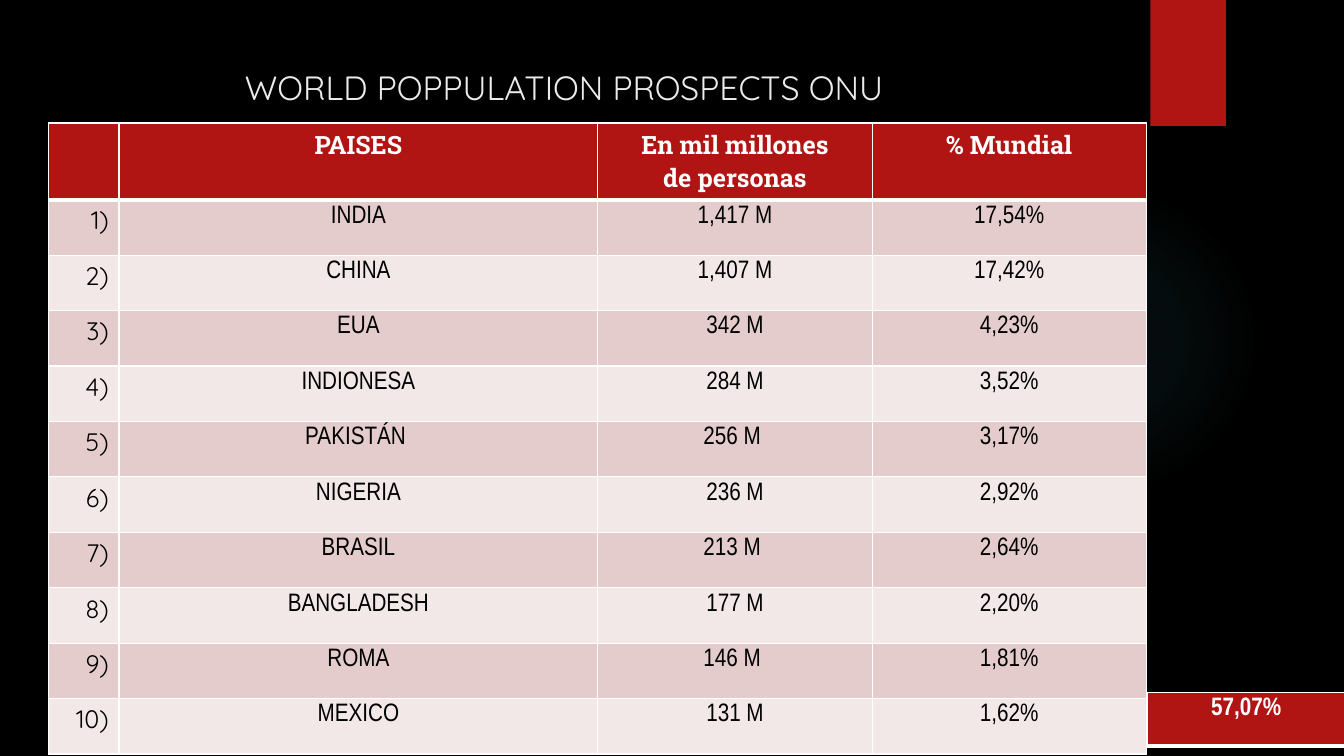
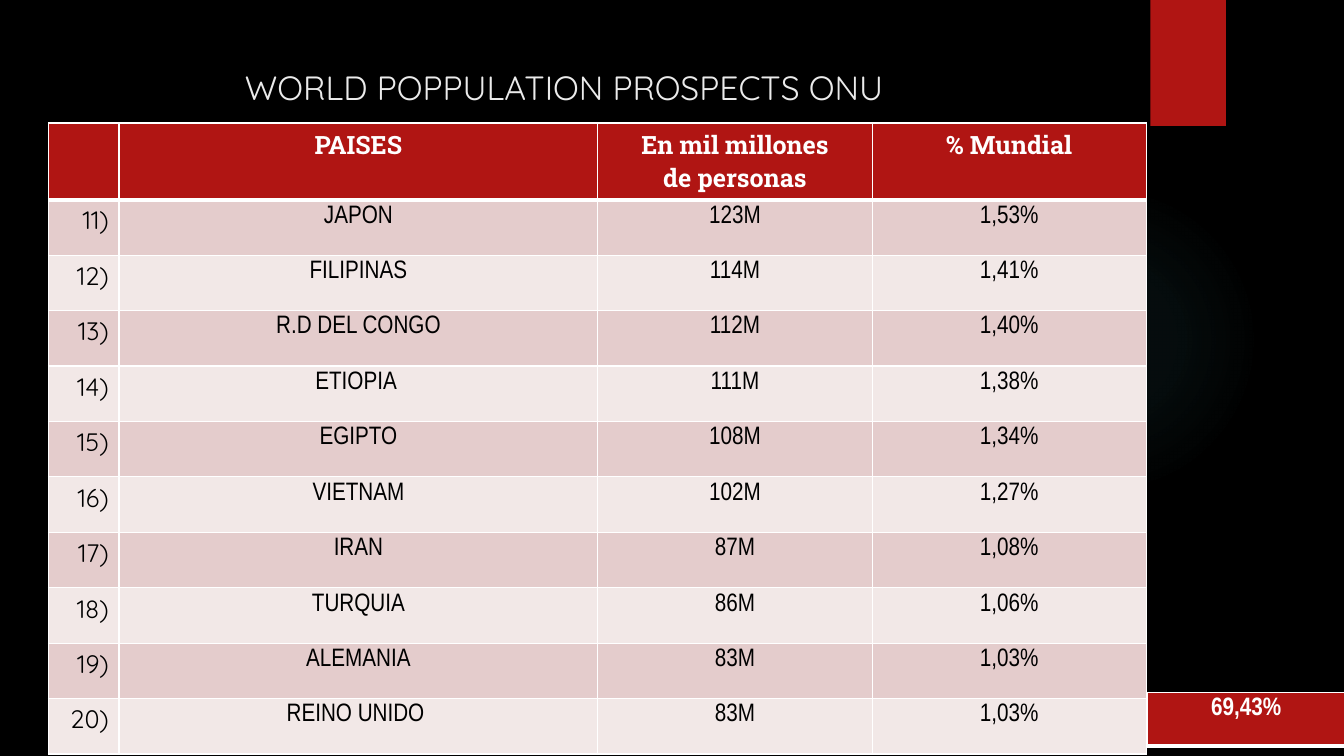
from lxml import etree
from pptx import Presentation
from pptx.dml.color import RGBColor
from pptx.enum import shapes, text
from pptx.oxml import parse_xml
from pptx.oxml.ns import nsdecls, qn
from pptx.util import Inches, Pt

COLORS = {"back": "000000", "red": "B01513", "title": "EBEBEB", "white": "FFFFFF",
          "black": "000000", "odd": "E4CCCC", "even": "F2E8E7", "glow": "50B9C1"}
SANS, SLAB, SLIM = "Quicksand", "Roboto Slab", "Arial Narrow"
LEFT, MID, RIGHT = text.PP_ALIGN.LEFT, text.PP_ALIGN.CENTER, text.PP_ALIGN.RIGHT

TITLE = "WORLD POPPULATION PROSPECTS ONU"
HEADS = ["", "PAISES", "En mil millones\nde personas", "% Mundial"]
COLS = [0.7, 4.75, 2.72, 2.72]
HEAD_H, ROW_H = 0.7, 0.55

FIRST = [
    ("INDIA", "1,417 M", "17,54%"),
    ("CHINA", "1,407 M", "17,42%"),
    ("EUA", "342 M", "4,23%"),
    ("INDIONESA", "284 M", "3,52%"),
    ("PAKISTÁN ", "256 M ", "3,17%"),
    ("NIGERIA", "236 M", "2,92%"),
    ("BRASIL", "213 M ", "2,64%"),
    ("BANGLADESH", "177 M", "2,20%"),
    ("ROMA", "146 M ", "1,81%"),
    ("MEXICO", "131 M", "1,62%"),
]
SECOND = [
    ("JAPON", "123M", "1,53%"),
    ("FILIPINAS", "114M", "1,41%"),
    ("R.D DEL CONGO", "112M", "1,40%"),
    ("ETIOPIA ", "111M", "1,38%"),
    ("EGIPTO", "108M", "1,34%"),
    ("VIETNAM", "102M", "1,27%"),
    ("IRAN", "87M", "1,08%"),
    ("TURQUIA", "86M", "1,06%"),
    ("ALEMANIA", "83M", "1,03%"),
    ("REINO UNIDO ", "83M", "1,03%"),
]


def rgb(name):
    return RGBColor.from_string(COLORS[name])


def write(frame, words, font=SLIM, size=18, color="black", bold=False, align=MID):
    frame.text = words
    for para in frame.paragraphs:
        para.alignment = align
        para.font.name = font
        para.font.size = Pt(size)
        para.font.bold = bold
        para.font.color.rgb = rgb(color)


def border(cell, **sides):
    """Draw white cell edges; each side (L, R, T, B) gives a width in points."""
    props = cell._tc.get_or_add_tcPr()
    for spot, (side, width) in enumerate(sides.items()):
        line = etree.Element(qn(f"a:ln{side}"), w=str(Pt(width)))
        fill = etree.SubElement(line, qn("a:solidFill"))
        etree.SubElement(fill, qn("a:srgbClr"), val=COLORS["white"])
        props.insert(spot, line)


def fill_cell(cell, words, fill, edges=None, **style):
    cell.fill.solid()
    cell.fill.fore_color.rgb = rgb(fill)
    cell.margin_top = Inches(0.05)
    border(cell, **(edges or {"L": 1, "R": 1, "B": 1}))
    write(cell.text_frame, words, **style)


def add_grid(slide, left, top, cols, rows):
    frame = slide.shapes.add_table(len(rows), len(cols), Inches(left), Inches(top),
                                   Inches(sum(cols)), Inches(sum(rows)))
    table = frame.table
    table.first_row = table.horz_banding = False
    for col, width in zip(table.columns, cols):
        col.width = Inches(width)
    for row, height in zip(table.rows, rows):
        row.height = Inches(height)
    return table


def add_plain(slide, kind, left, top, width, height):
    shape = slide.shapes.add_shape(kind, Inches(left), Inches(top),
                                   Inches(width), Inches(height))
    shape.shadow.inherit = False
    shape.line.fill.background()
    return shape


def add_glow(slide, left, top, size):
    glow = add_plain(slide, shapes.MSO_SHAPE.OVAL, left, top, size, size)
    glow.fill.background()
    stops = "".join(
        f'<a:gs pos="{pos * 1000}"><a:srgbClr val="{COLORS["glow"]}">'
        f'<a:alpha val="{alpha * 1000}"/></a:srgbClr></a:gs>'
        for pos, alpha in [(0, 7), (36, 6), (69, 0)])
    fill = parse_xml(
        f'<a:gradFill {nsdecls("a")}><a:gsLst>{stops}</a:gsLst><a:path path="circle">'
        '<a:fillToRect l="50000" t="50000" r="50000" b="50000"/></a:path></a:gradFill>')
    props = glow._element.spPr
    props.replace(props.find(qn("a:noFill")), fill)


def add_tab(slide, left, top, width, height):
    tab = add_plain(slide, shapes.MSO_SHAPE.RECTANGLE, left, top, width, height)
    tab.fill.solid()
    tab.fill.fore_color.rgb = rgb("red")


def set_title(slide, left, top, width, height):
    title = slide.shapes.title
    title.left, title.top = Inches(left), Inches(top)
    title.width, title.height = Inches(width), Inches(height)
    frame = title.text_frame
    frame.auto_size = text.MSO_AUTO_SIZE.NONE
    frame.vertical_anchor = text.MSO_ANCHOR.TOP
    write(frame, TITLE, font=SANS, size=24, color="title", align=LEFT)


def add_ranks(slide, left, top, start, data):
    table = add_grid(slide, left, top, COLS, [HEAD_H] + [ROW_H] * len(data))
    for col, head in enumerate(HEADS):
        fill_cell(table.cell(0, col), head, "red", edges={"L": 1, "R": 1, "T": 1, "B": 3},
                  font=SLAB, color="white", bold=True)
    for row, values in enumerate(data, 1):
        fill = "odd" if row % 2 else "even"
        fill_cell(table.cell(row, 0), f"{start + row - 1})", fill, font=SANS, align=RIGHT)
        for col, value in enumerate(values, 1):
            fill_cell(table.cell(row, col), value, fill)


def add_total(slide, left, top, width, height, total):
    table = add_grid(slide, left, top, [width], [height])
    fill_cell(table.cell(0, 0), total, "red", edges={"L": 1, "R": 1, "T": 1, "B": 3},
              color="white", bold=True)


def add_page(deck, start, data, total):
    slide = deck.slides.add_slide(deck.slide_layouts[5])
    add_glow(slide, 9.41, 1.83, 3.08)
    add_tab(slide, 11.41, 0, 0.75, 1.25)
    set_title(slide, 2.33, 0.61, 8.29, 0.22)
    add_ranks(slide, 0.48, 1.22, start, data)
    add_total(slide, 11.38, 6.87, 1.96, 0.53, total)


def main():
    deck = Presentation()
    deck.slide_width, deck.slide_height = Inches(13.33), Inches(7.5)
    back = deck.slide_master.background.fill
    back.solid()
    back.fore_color.rgb = rgb("back")
    add_page(deck, 1, FIRST, "57,07%")
    add_page(deck, 11, SECOND, "69,43%")
    deck.save("out.pptx")


if __name__ == "__main__":
    main()
